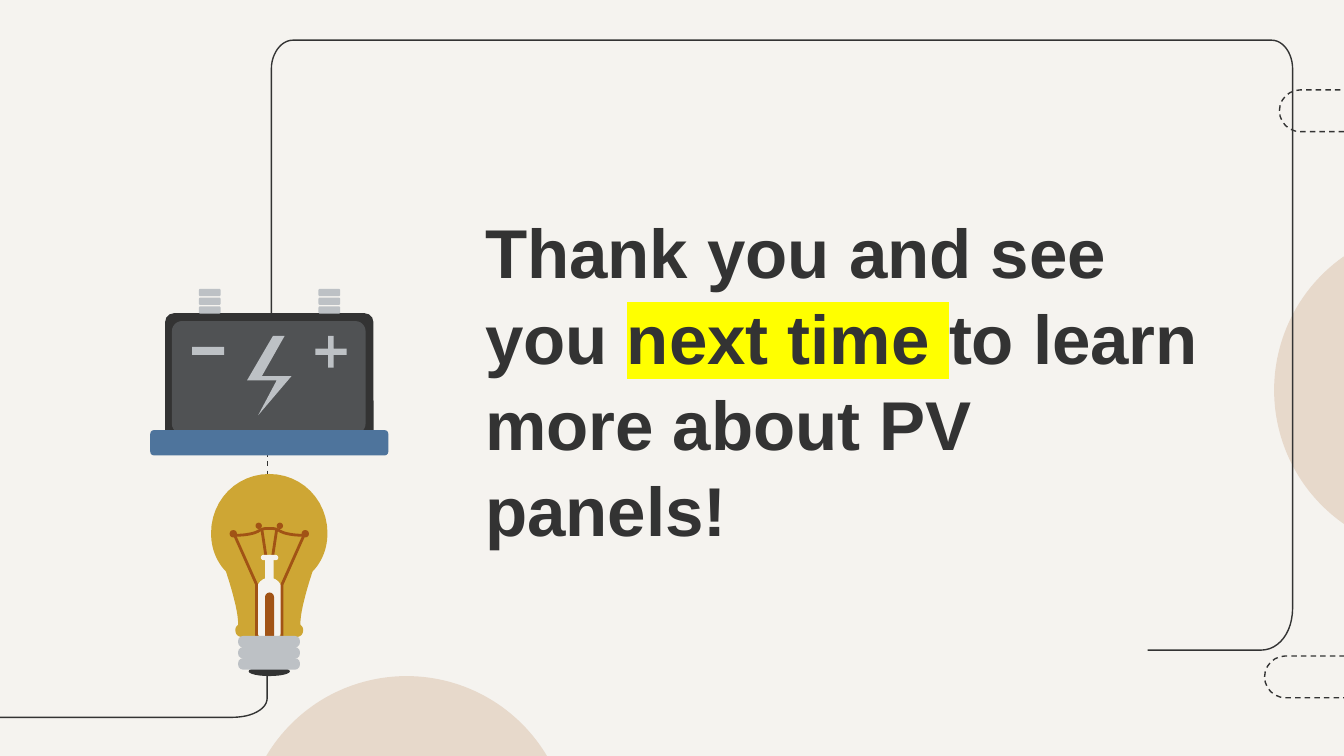
from lxml import etree
from pptx import Presentation
from pptx.dml.color import RGBColor
from pptx.enum.dml import MSO_LINE
from pptx.enum.shapes import MSO_CONNECTOR, MSO_SHAPE
from pptx.enum.text import MSO_ANCHOR, PP_ALIGN
from pptx.oxml.ns import qn
from pptx.util import Cm, Pt

OVAL = MSO_SHAPE.OVAL
RECT = MSO_SHAPE.RECTANGLE
ROUND = MSO_SHAPE.ROUNDED_RECTANGLE
CROSS = MSO_SHAPE.CROSS
STRAIGHT = MSO_CONNECTOR.STRAIGHT
DASH = MSO_LINE.DASH
MIDDLE = MSO_ANCHOR.MIDDLE
LEFT = PP_ALIGN.LEFT

COLORS = {
    "paper": "F5F3EF", "ink": "333333", "copper": "A15315", "glass": "CEA634",
    "metal": "BDC1C5", "panel": "B4BCC5", "blue": "4E749C", "marker": "FFFF00",
}
TITLE_FONT = {"name": "Arial", "size": Pt(37), "bold": True}
TITLE_FRAME = {
    "word_wrap": True, "vertical_anchor": MIDDLE,
    "margin_left": Cm(0.25), "margin_right": Cm(0.25),
    "margin_top": Cm(0.25), "margin_bottom": Cm(0.25),
}
BULB_AXIS = 5.09


def color(key):
    return RGBColor.from_string(COLORS[key])


def apply(target, values):
    for attribute, value in values.items():
        setattr(target, attribute, value)


def trace(steps, pieces=12):
    """Turn points (x, y) and cubic curves (x1, y1, x2, y2, x, y) into points."""
    points = []
    for step in steps:
        if len(step) == 2:
            points.append(step)
            continue
        bezier = [points[-1], step[:2], step[2:4], step[4:]]
        for i in range(1, pieces + 1):
            t = i / pieces
            weights = ((1 - t) ** 3, 3 * t * (1 - t) ** 2, 3 * t * t * (1 - t), t ** 3)
            points.append(tuple(sum(w * p[axis] for w, p in zip(weights, bezier))
                                for axis in (0, 1)))
    return points


def mirror(points):
    return [(2 * BULB_AXIS - x, y) for x, y in reversed(points)]


class Sketch:
    def __init__(self, slide):
        self.slide = slide
        self.shapes = slide.shapes

    def background(self, key):
        self.slide.background.fill.solid()
        self.slide.background.fill.fore_color.rgb = color(key)

    def style(self, item, fill=None, line=None, width=0.75, dash=None, alpha=None):
        item.shadow.inherit = False
        if fill:
            item.fill.solid()
            item.fill.fore_color.rgb = color(fill)
            if alpha:
                tint = item.fill._xPr.find(qn("a:solidFill"))[0]
                etree.SubElement(tint, qn("a:alpha"), val=str(alpha * 1000))
        else:
            item.fill.background()
        if line:
            item.line.color.rgb = color(line)
            apply(item.line, {"width": Pt(width), "dash_style": dash})
        else:
            item.line.fill.background()

    def preset(self, kind, x, y, w, h, adjust=None, **look):
        item = self.shapes.add_shape(kind, Cm(x), Cm(y), Cm(w), Cm(h))
        if adjust is not None:
            item.adjustments[0] = adjust
        self.style(item, **look)

    def outline(self, points, close=False, **look):
        points = [(Cm(x), Cm(y)) for x, y in points]
        builder = self.shapes.build_freeform(*points[0])
        builder.add_line_segments(points[1:], close=close)
        self.style(builder.convert_to_shape(), **look)

    def connector(self, x1, y1, x2, y2, key, width=0.75, dash=None):
        item = self.shapes.add_connector(STRAIGHT, Cm(x1), Cm(y1), Cm(x2), Cm(y2))
        item.line.color.rgb = color(key)
        apply(item.line, {"width": Pt(width), "dash_style": dash})
        etree.SubElement(item._element.spPr, qn("a:effectLst"))

    def title(self, x, y, w, h, parts):
        frame = self.shapes.add_textbox(Cm(x), Cm(y), Cm(w), Cm(h)).text_frame
        apply(frame, TITLE_FRAME)
        paragraph = frame.paragraphs[0]
        apply(paragraph, {"alignment": LEFT, "line_spacing": 1.04})
        for text, marker in parts:
            run = paragraph.add_run()
            run.text = text
            apply(run.font, TITLE_FONT)
            run.font.color.rgb = color("ink")
            if marker:
                highlight = etree.Element(qn("a:highlight"))
                etree.SubElement(highlight, qn("a:srgbClr"), val=COLORS[marker])
                run.font._element.find(qn("a:solidFill")).addnext(highlight)


def draw_backdrop(sketch):
    sketch.background("paper")
    for x, y in ((24.08, 4.29), (4.6, 12.78)):
        sketch.preset(OVAL, x, y, 6.17, 6.17, fill="copper", alpha=16)
    for x, y in ((23.9, 12.4), (24.18, 1.7)):
        sketch.preset(ROUND, x, y, 3.28, 0.79, 0.5, line="ink", dash=DASH)


def draw_wiring(sketch):
    frame = [(21.69, 12.29), (23.83, 12.29), (24.18, 12.29, 24.43, 11.94, 24.43, 11.5),
             (24.43, 1.3), (24.43, 1.02, 24.26, 0.76, 24.03, 0.76),
             (5.54, 0.76), (5.31, 0.76, 5.13, 1.02, 5.13, 1.3), (5.13, 5.94)]
    ground = [(5.05, 12.47), (5.05, 13.2), (5.05, 13.41, 4.75, 13.56, 4.4, 13.56),
              (-0.58, 13.56)]
    for wire in (frame, ground):
        sketch.outline(trace(wire), line="ink")
    sketch.connector(5.05, 8.53, 5.05, 9.58, "ink", dash=DASH)


def draw_bulb(sketch):
    # Glass
    glass = trace([(BULB_AXIS, 8.96), (4.48, 8.96, 3.99, 9.45, 3.99, 10.08),
                   (3.99, 10.36, 4.09, 10.62, 4.27, 10.8),
                   (4.27, 10.8, 4.52, 11.53, 4.5, 11.81),
                   (4.47, 11.84, 4.45, 11.86, 4.45, 11.91),
                   (4.45, 11.99, 4.5, 12.04, 4.57, 12.04), (BULB_AXIS, 12.04)])
    sketch.outline(glass + mirror(glass), close=True, fill="glass")
    # Stem
    sketch.preset(ROUND, 4.85, 10.92, 0.48, 1.2, 0.5, fill="paper")
    # Filament, each part with its mirror image
    filament = trace([(4.44, 10.12), (4.62, 10.12, 4.82, 10.09, 4.9, 10.03),
                      (4.97, 9.99, 5.03, 9.99, BULB_AXIS, 9.99)])
    sketch.outline(filament + mirror(filament), line="copper", width=1.5)
    leg = [(4.85, 12.02), (4.85, 11.05), (4.44, 10.13)]
    support = [(4.95, 10.01), (5.03, 10.54)]
    for part in (leg, support):
        for points in (part, mirror(part)):
            sketch.outline(points, line="copper", width=1.5)
    for x, y, size in ((4.41, 10.09, 0.14), (4.89, 9.94, 0.12)):
        for center in (x, 2 * BULB_AXIS - x):
            sketch.preset(OVAL, center - size / 2, y - size / 2, size, size, fill="copper")
    # Collar, neck and core
    sketch.preset(ROUND, 4.93, 10.49, 0.33, 0.1, 0.5, fill="paper")
    sketch.preset(ROUND, 5.01, 10.49, 0.16, 0.76, 0.5, fill="paper")
    sketch.preset(ROUND, 5.01, 11.2, 0.17, 0.92, 0.5, fill="copper")
    # Screw base
    sketch.preset(OVAL, 4.7, 12.6, 0.78, 0.18, fill="ink")
    for ring in range(3):
        sketch.preset(ROUND, 4.5, 12.02 + 0.21 * ring, 1.17, 0.22, 0.45, fill="metal")


def draw_battery(sketch):
    # Case and terminals
    sketch.preset(ROUND, 3.12, 5.92, 3.94, 2.46, 0.07, fill="ink")
    sketch.preset(ROUND, 3.25, 6.07, 3.66, 2.13, 0.09, fill="panel", alpha=23)
    for x in (3.76, 6.02):
        for ring in range(3):
            sketch.preset(ROUND, x, 5.46 + 0.165 * ring, 0.41, 0.14, 0.2, fill="metal")
    sketch.preset(ROUND, 2.84, 8.13, 4.5, 0.48, 0.15, fill="blue")
    # Minus, plus and lightning
    sketch.preset(RECT, 3.63, 6.56, 0.61, 0.15, fill="metal")
    sketch.preset(CROSS, 5.96, 6.35, 0.59, 0.6, 0.41, fill="metal")
    lightning = [(4.88, 7.85), (5.23, 7.19), (4.67, 7.19), (5.16, 6.35),
                 (5.38, 6.35), (4.95, 7.11), (5.51, 7.11)]
    sketch.outline(lightning, close=True, fill="metal")


def main():
    deck = Presentation()
    apply(deck, {"slide_width": Cm(25.4), "slide_height": Cm(14.29)})
    sketch = Sketch(deck.slides.add_slide(deck.slide_layouts[6]))
    draw_backdrop(sketch)
    sketch.title(8.92, 3.84, 14.2, 6.63, [
        ("Thank you and see you ", None),
        ("next time ", "marker"),
        ("to learn more about PV panels!", None),
    ])
    draw_wiring(sketch)
    draw_bulb(sketch)
    draw_battery(sketch)
    deck.save("out.pptx")


if __name__ == "__main__":
    main()
